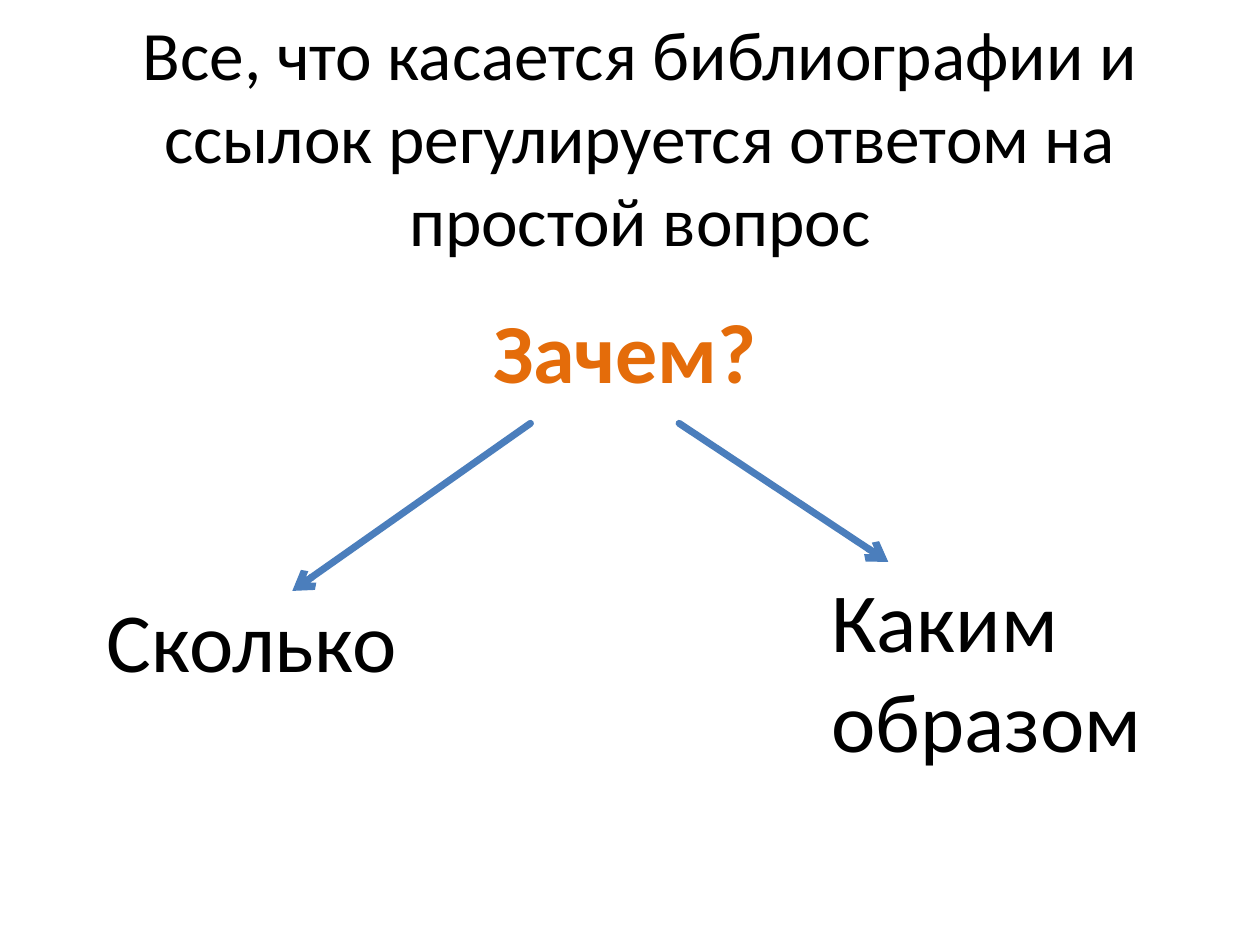
from dataclasses import dataclass

from lxml.etree import SubElement
from pptx import Presentation
from pptx.dml.color import RGBColor
from pptx.enum.shapes import MSO_CONNECTOR as Connector
from pptx.enum.text import MSO_ANCHOR as Anchor, MSO_AUTO_SIZE as AutoSize, PP_ALIGN as Align
from pptx.oxml.ns import qn
from pptx.slide import Slide
from pptx.text.text import TextFrame
from pptx.util import Inches, Pt


@dataclass(frozen=True)
class Theme:
    font: str = "Calibri"
    text: str = "000000"
    accent: str = "E46C0A"
    arrow: str = "4B7EBC"
    title_size: float = 39.6
    body_size: float = 48
    arrow_width: float = 4


@dataclass(frozen=True)
class Label:
    text: str
    left: float
    top: float
    width: float
    height: float
    color: str
    bold: bool = False
    align: Align = Align.LEFT
    auto_size: AutoSize = AutoSize.NONE


@dataclass(frozen=True)
class Arrow:
    start: tuple[float, float]
    end: tuple[float, float]


THEME = Theme()
TITLE = "Все, что касается библиографии и ссылок регулируется ответом на простой вопрос"
LABELS = [
    Label("Зачем?", 1.46, 2.33, 7, 1.92, THEME.accent, bold=True, align=Align.CENTER),
    Label("Сколько", 0.75, 4.62, 3.39, 0.9, THEME.text, auto_size=AutoSize.SHAPE_TO_FIT_TEXT),
    Label("Каким\nобразом", 6.5, 4.46, 2.99, 1.72, THEME.text, auto_size=AutoSize.SHAPE_TO_FIT_TEXT),
]
ARROWS = [
    Arrow((4.21, 3.36), (2.32, 4.69)),
    Arrow((5.39, 3.36), (7.05, 4.46)),
]


def write_text(frame: TextFrame, text: str, *, size: float, color: str,
               bold: bool = False, align: Align = Align.LEFT,
               anchor: Anchor = Anchor.TOP, auto_size: AutoSize = AutoSize.NONE) -> None:
    frame.word_wrap = True
    frame.auto_size = auto_size
    frame.vertical_anchor = anchor
    frame.text = text
    for para in frame.paragraphs:
        para.alignment = align
        para.space_before = Pt(0)
        for span in para.runs:
            span.font.name = THEME.font
            span.font.size = Pt(size)
            span.font.bold = bold
            span.font.color.rgb = RGBColor.from_string(color)


def draw_title(page: Slide) -> None:
    title = page.shapes.title
    title.left, title.top = Inches(0.83), Inches(0.27)
    title.width, title.height = Inches(8.5), Inches(1.61)
    write_text(title.text_frame, TITLE, size=THEME.title_size, color=THEME.text,
               align=Align.CENTER, anchor=Anchor.MIDDLE)


def draw_label(page: Slide, label: Label) -> None:
    box = page.shapes.add_textbox(Inches(label.left), Inches(label.top),
                                  Inches(label.width), Inches(label.height))
    write_text(box.text_frame, label.text, size=THEME.body_size, color=label.color,
               bold=label.bold, align=label.align, auto_size=label.auto_size)


def draw_arrow(page: Slide, arrow: Arrow) -> None:
    ends = [Inches(value) for value in (*arrow.start, *arrow.end)]
    connector = page.shapes.add_connector(Connector.STRAIGHT, *ends)
    connector.line.color.rgb = RGBColor.from_string(THEME.arrow)
    connector.line.width = Pt(THEME.arrow_width)
    properties = connector._element.spPr
    outline = properties.find(qn("a:ln"))
    outline.set("cap", "rnd")
    SubElement(outline, qn("a:tailEnd"), type="arrow")
    SubElement(properties, qn("a:effectLst"))


def main() -> None:
    deck = Presentation()
    deck.slide_width, deck.slide_height = Inches(10), Inches(7.5)
    page = deck.slides.add_slide(deck.slide_layouts.get_by_name("Title Only"))
    draw_title(page)
    for label in LABELS:
        draw_label(page, label)
    for arrow in ARROWS:
        draw_arrow(page, arrow)
    deck.save("out.pptx")


if __name__ == "__main__":
    main()
